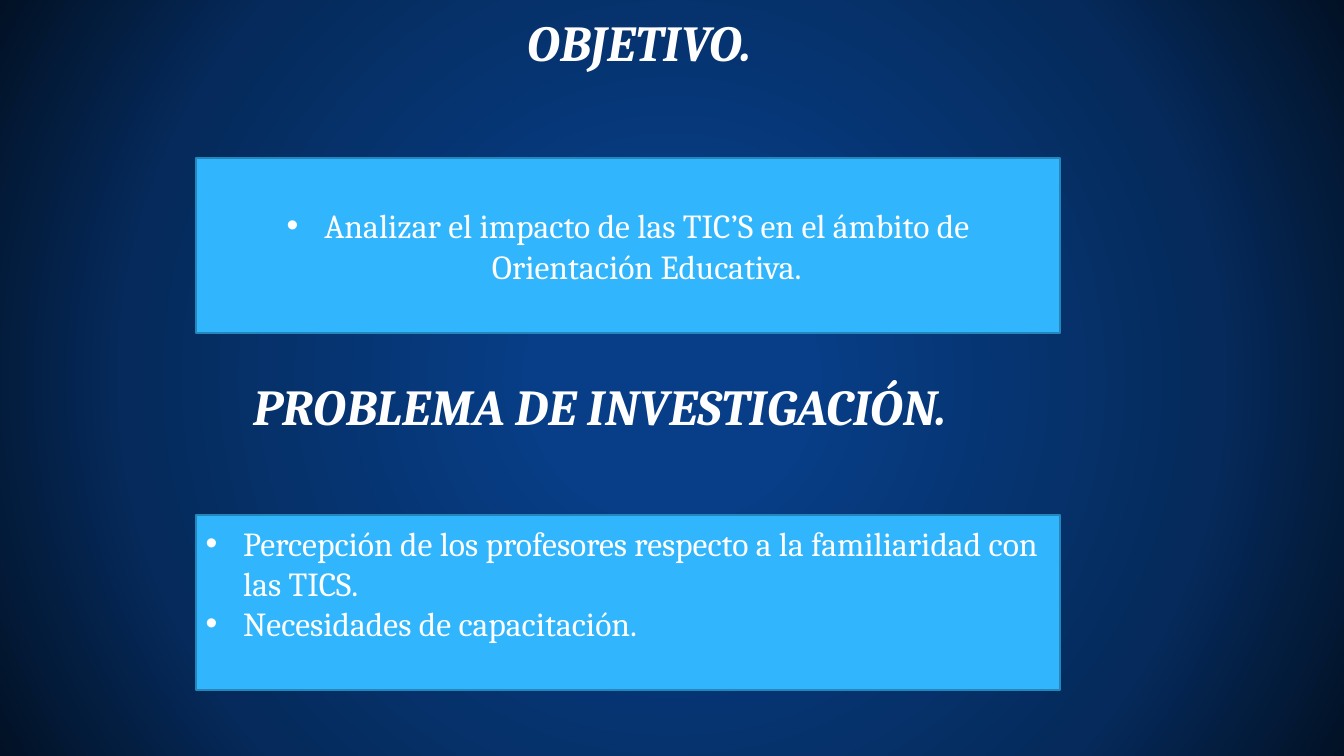
from lxml import etree
from pptx import Presentation
from pptx.dml.color import RGBColor
from pptx.enum.shapes import MSO_SHAPE as Shape
from pptx.enum.text import MSO_ANCHOR as Anchor, PP_ALIGN as Align
from pptx.oxml import parse_xml
from pptx.oxml.ns import nsdecls, qn
from pptx.util import Cm, Pt

SECTIONS = [
    {"heading": "OBJETIVO.", "heading_at": (1.32, 0.33), "panel_top": 3.99,
     "points": ["Analizar el impacto de las TIC’S en el ámbito de Orientación Educativa."],
     "align": Align.CENTER, "bottom_inset": 0.13},
    {"heading": "PROBLEMA DE INVESTIGACIÓN.", "heading_at": (0.33, 9.5), "panel_top": 12.98,
     "points": ["Percepción de los profesores respecto a la familiaridad con las TICS.",
                "Necesidades de capacitación."],
     "align": Align.LEFT, "bottom_inset": 1.1},
]
BACKDROP = [(17, "073E87"), (71, "052A5B"), (100, "021125")]

WHITE = RGBColor(0xFF, 0xFF, 0xFF)
SKY = RGBColor(0x31, 0xB6, 0xFD)
EDGE = RGBColor(0x24, 0x87, 0xBB)
FONT = "Cambria"
HEADING_SIZE = Cm(29.59), Cm(2.72)
PANEL_LEFT, PANEL_WIDTH, PANEL_HEIGHT = Cm(4.93), Cm(21.79), Cm(4.4)
INDENT = Cm(0.95)


def paint_backdrop(slide):
    stops = "".join(f'<a:gs pos="{pos * 1000}"><a:srgbClr val="{color}"/></a:gs>'
                    for pos, color in BACKDROP)
    slide.element.cSld.insert(0, parse_xml(
        f'<p:bg {nsdecls("p", "a")}><p:bgPr><a:gradFill rotWithShape="1">'
        f'<a:gsLst>{stops}</a:gsLst><a:path path="circle">'
        '<a:fillToRect l="50000" t="50000" r="50000" b="50000"/></a:path>'
        '</a:gradFill><a:effectLst/></p:bgPr></p:bg>'))


def style(paragraph, text, size, align):
    paragraph.text = text
    paragraph.alignment = align
    font = paragraph.font
    font.name, font.size = FONT, Pt(size)
    font.color.rgb = WHITE


def add_bullet(paragraph):
    props = paragraph._p.get_or_add_pPr()
    props.set("marL", str(INDENT))
    props.set("indent", str(-INDENT))
    bullet_font = etree.Element(qn("a:buFont"), typeface="Arial")
    bullet = etree.Element(qn("a:buChar"), char="•")
    props.insert(0, bullet_font)
    props.insert(1, bullet)


def add_heading(slide, section):
    left, top = section["heading_at"]
    frame = slide.shapes.add_textbox(Cm(left), Cm(top), *HEADING_SIZE).text_frame
    frame.word_wrap = True
    heading = frame.paragraphs[0]
    style(heading, section["heading"], 36, Align.CENTER)
    heading.line_spacing = 0.9
    heading.font.bold = heading.font.italic = True


def add_panel(slide, section):
    panel = slide.shapes.add_shape(Shape.RECTANGLE, PANEL_LEFT, Cm(section["panel_top"]),
                                   PANEL_WIDTH, PANEL_HEIGHT)
    panel.shadow.inherit = False
    panel.fill.solid()
    panel.fill.fore_color.rgb = SKY
    panel.line.color.rgb = EDGE
    panel.line.width = Pt(1.5)
    frame = panel.text_frame
    frame.word_wrap = True
    frame.vertical_anchor = Anchor.MIDDLE
    frame.margin_bottom = Cm(section["bottom_inset"])
    for index, point in enumerate(section["points"]):
        paragraph = frame.add_paragraph() if index else frame.paragraphs[0]
        style(paragraph, point, 24, section["align"])
        add_bullet(paragraph)


def main():
    deck = Presentation()
    deck.slide_width, deck.slide_height = Cm(33.87), Cm(19.05)
    slide = deck.slides.add_slide(deck.slide_layouts[6])
    paint_backdrop(slide)
    for section in SECTIONS:
        add_heading(slide, section)
        add_panel(slide, section)
    deck.save("out.pptx")


if __name__ == "__main__":
    main()
